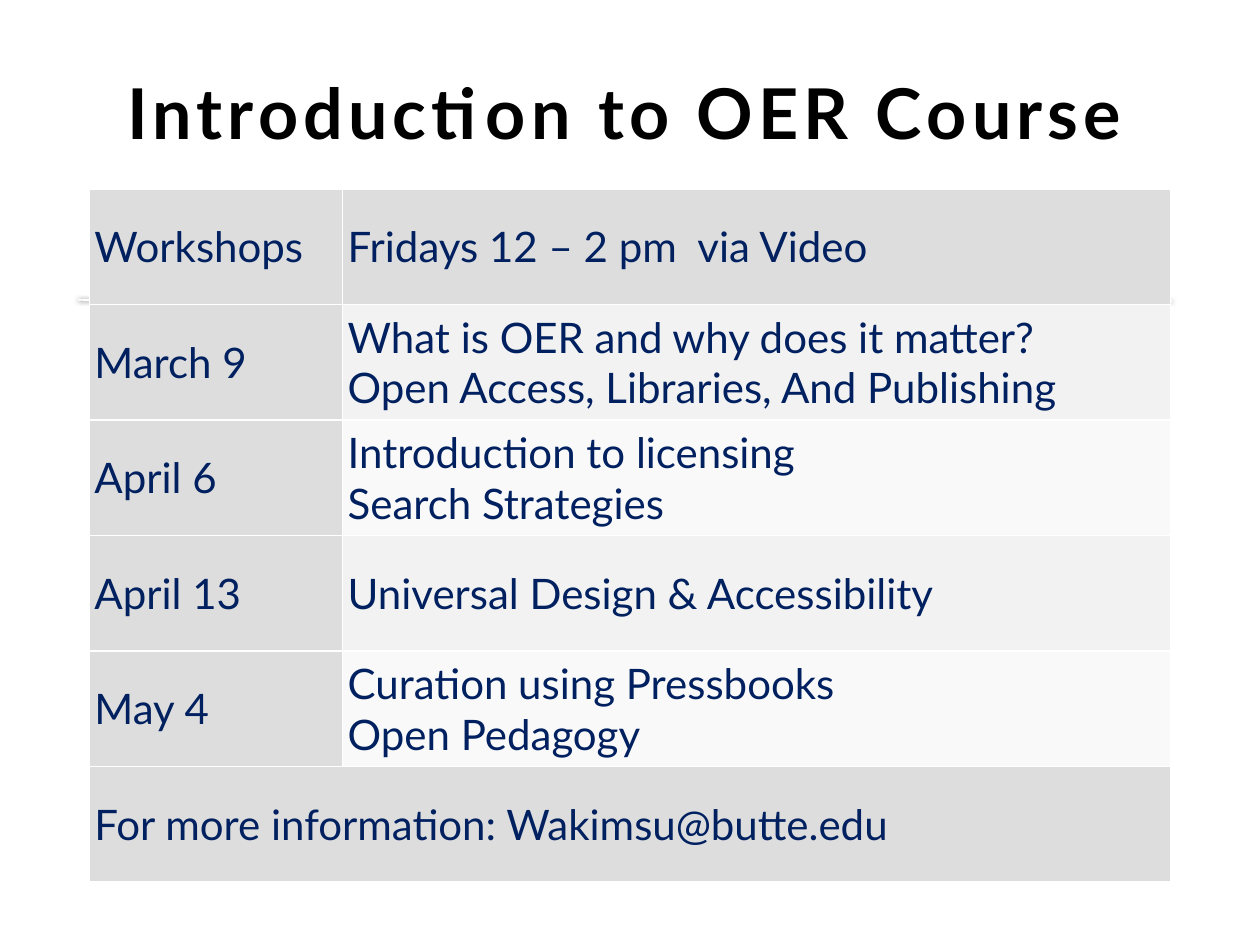
from pptx import Presentation
from pptx.dml.color import RGBColor
from pptx.enum.shapes import MSO_CONNECTOR
from pptx.enum.text import MSO_ANCHOR, PP_ALIGN
from pptx.oxml import parse_xml
from pptx.oxml.ns import nsdecls
from pptx.util import Inches, Pt

STRAIGHT = MSO_CONNECTOR.STRAIGHT
MIDDLE, BOTTOM = MSO_ANCHOR.MIDDLE, MSO_ANCHOR.BOTTOM
CENTER = PP_ALIGN.CENTER

BLACK = RGBColor(0x00, 0x00, 0x00)
WHITE = RGBColor(0xFF, 0xFF, 0xFF)
NAVY = RGBColor(0x00, 0x20, 0x60)
RULE_WHITE = RGBColor(0xFE, 0xFE, 0xFE)
LABEL_GRAY = RGBColor(0xDD, 0xDD, 0xDD)
BAND_GRAYS = (RGBColor(0xF2, 0xF2, 0xF2), RGBColor(0xF9, 0xF9, 0xF9))

FONT = "Lato"
SCHEDULE = [
    ("Workshops", "Fridays 12 – 2 pm  via Video"),
    ("March 9", "What is OER and why does it matter?\n"
                "Open Access, Libraries, And Publishing"),
    ("April 6", "Introduction to licensing\nSearch Strategies"),
    ("April 13", "Universal Design & Accessibility"),
    ("May 4", "Curation using Pressbooks\nOpen Pedagogy"),
    ("For more information: Wakimsu@butte.edu", ""),
]
COLUMN_WIDTHS = (2.01, 6.57)
ROW_HEIGHT = 5.5 / len(SCHEDULE)


def style_font(font, size, color, bold=False):
    font.name = FONT
    font.size = Pt(size)
    font.bold = bold
    font.color.rgb = color


def add_title(slide, text):
    title = slide.shapes.title
    title.left, title.top = Inches(0.42), Inches(0.5)
    title.width, title.height = Inches(9.08), Inches(0.77)
    frame = title.text_frame
    frame.text = text
    frame.vertical_anchor = BOTTOM
    heading = frame.paragraphs[0]
    heading.alignment = CENTER
    run = heading.runs[0]
    style_font(run.font, 40, BLACK, bold=True)
    run.font._element.set("spc", "300")


def add_shadowed_rule(slide, left, right):
    rule = slide.shapes.add_connector(
        STRAIGHT, Inches(left), Inches(2.38), Inches(right), Inches(2.39))
    rule.line.color.rgb = RULE_WHITE
    rule.line.width = Pt(1)
    rule._element.spPr.append(parse_xml(
        f'<a:effectLst {nsdecls("a")}>'
        f'<a:outerShdw blurRad="{Pt(2.8)}" dist="0" dir="2700000">'
        f'<a:srgbClr val="{BLACK}"><a:alpha val="55000"/></a:srgbClr>'
        '</a:outerShdw></a:effectLst>'))


def set_borders(cell):
    properties = cell._tc.get_or_add_tcPr()
    for side in ("lnL", "lnR", "lnT", "lnB"):
        properties.append(parse_xml(
            f'<a:{side} {nsdecls("a")} w="{Pt(1)}"><a:solidFill>'
            f'<a:srgbClr val="{WHITE}"/></a:solidFill></a:{side}>'))


def fill_cell(cell, text, color):
    set_borders(cell)
    cell.fill.solid()
    cell.fill.fore_color.rgb = color
    cell.vertical_anchor = MIDDLE
    cell.margin_left = cell.margin_right = Inches(0.04)
    cell.margin_top = cell.margin_bottom = 0
    cell.text_frame.text = text
    for paragraph in cell.text_frame.paragraphs:
        for run in paragraph.runs:
            style_font(run.font, 24, NAVY)


def add_schedule(slide):
    last = len(SCHEDULE) - 1
    table = slide.shapes.add_table(
        len(SCHEDULE), len(COLUMN_WIDTHS), Inches(0.71), Inches(1.5),
        Inches(sum(COLUMN_WIDTHS)), Inches(ROW_HEIGHT * len(SCHEDULE))).table
    for column, width in zip(table.columns, COLUMN_WIDTHS):
        column.width = Inches(width)
    for index, texts in enumerate(SCHEDULE):
        table.rows[index].height = Inches(ROW_HEIGHT)
        is_session = 0 < index < last
        topic_color = BAND_GRAYS[(index - 1) % 2] if is_session else LABEL_GRAY
        for column, color in enumerate((LABEL_GRAY, topic_color)):
            fill_cell(table.cell(index, column), texts[column], color)
    table.cell(last, 0).merge(table.cell(last, 1))


def main():
    presentation = Presentation()
    presentation.slide_width = Inches(10)
    presentation.slide_height = Inches(7.5)
    slide = presentation.slides.add_slide(presentation.slide_layouts[5])
    for left, right in ((0.62, 4.72), (5.2, 9.3)):
        add_shadowed_rule(slide, left, right)
    add_schedule(slide)
    add_title(slide, "Introduction to OER Course")
    presentation.save("out.pptx")


if __name__ == "__main__":
    main()
